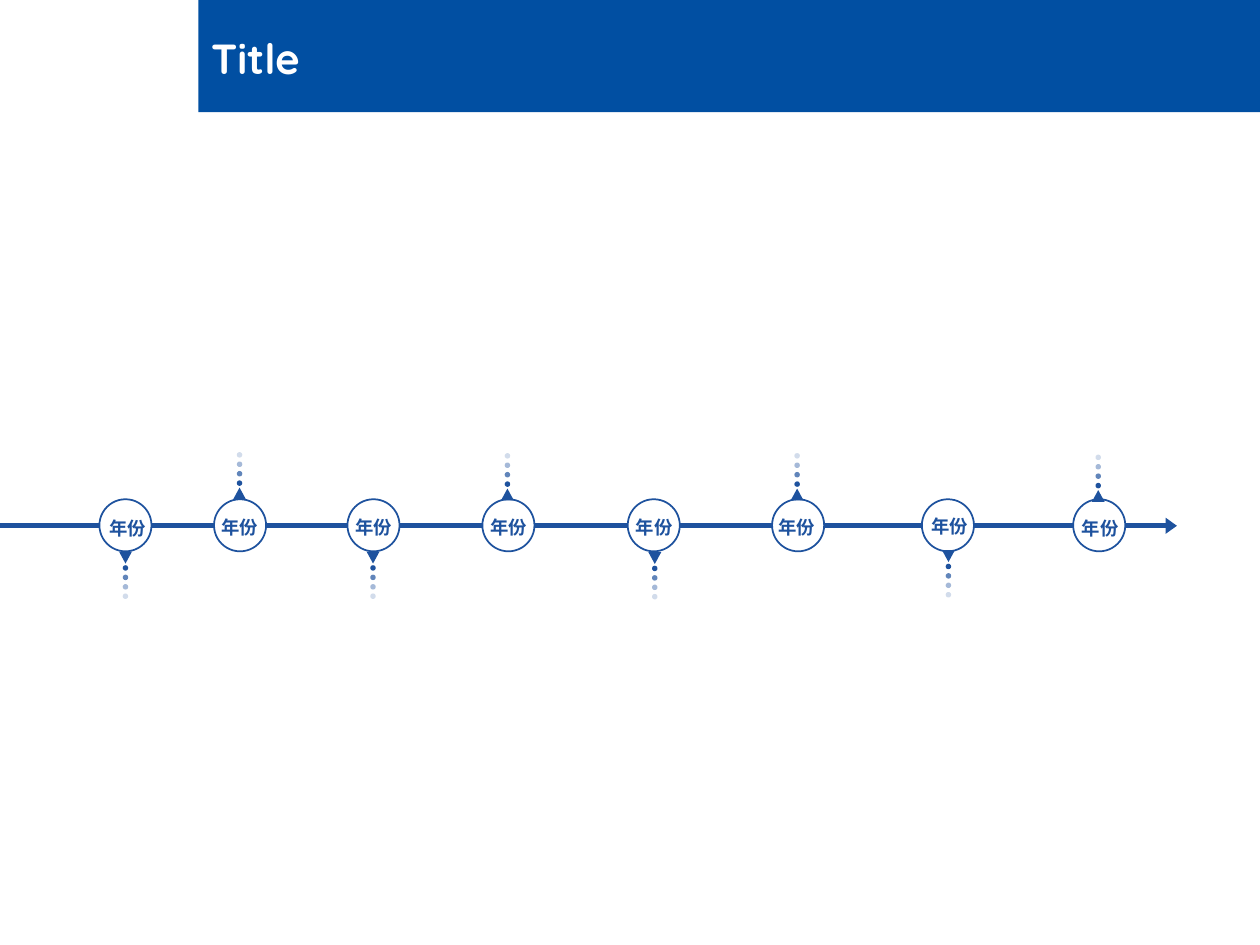
"""Build a timeline slide with eight year markers on an arrow."""
from lxml.etree import SubElement
from pptx import Presentation
from pptx.dml.color import RGBColor
from pptx.enum.shapes import MSO_CONNECTOR, MSO_SHAPE as Shp
from pptx.enum.text import MSO_ANCHOR, MSO_AUTO_SIZE as Fit, PP_ALIGN
from pptx.oxml.ns import qn
from pptx.util import Cm, Pt

BAND, BLUE, WHITE = "014FA2", "1E529E", "FFFFFF"
AXIS_Y, CIRCLE, DOT = 10.59, 1.05, 0.11
ALPHAS = (100, 70, 40, 20)
STATIONS = (
    (2.53, 1.96, 10.31, 2.53, 11.36, 1),
    (4.84, 4.22, 10.29, 4.83, 9.83, -1),
    (7.53, 6.91, 10.29, 7.52, 11.36, 1),
    (10.25, 9.64, 10.29, 10.23, 9.85, -1),
    (13.18, 12.57, 10.29, 13.2, 11.37, 1),
    (16.09, 15.44, 10.29, 16.07, 9.85, -1),
    (19.11, 18.53, 10.26, 19.12, 11.33, 1),
    (22.16, 21.56, 10.31, 22.14, 9.88, -1),
)


def rgb(color):
    return RGBColor.from_string(color)


class Deck:
    def __init__(self):
        self.prs = Presentation()
        self.prs.slide_width, self.prs.slide_height = Cm(25.4), Cm(19.05)
        self.s = self.prs.slides.add_slide(self.prs.slide_layouts[5])

    def run(self, p, text, font, size, color):
        r = p.add_run()
        r.text = text
        r.font.name, r.font.size, r.font.bold = font, Pt(size), True
        r.font.color.rgb = rgb(color)

    def shape(self, parent, kind, cx, cy, w, h, fill=BLUE, line=None, alpha=100, rot=0):
        sp = parent.shapes.add_shape(kind, Cm(cx - w / 2), Cm(cy - h / 2), Cm(w), Cm(h))
        sp.shadow.inherit = False
        sp.rotation = rot
        sp.fill.solid()
        sp.fill.fore_color.rgb = rgb(fill)
        if alpha < 100:
            clr = sp.element.spPr.find(qn("a:solidFill"))[0]
            SubElement(clr, qn("a:alpha"), val=str(alpha * 1000))
        if line:
            sp.line.color.rgb = rgb(line)
            sp.line.width = Pt(1)
        else:
            sp.line.fill.background()
        return sp

    def title(self, text):
        band = self.shape(self.s, Shp.RECTANGLE, 14.7, 1.13, 21.4, 2.26, BAND)
        sp = self.s.shapes.title
        sp.left, sp.top, sp.width, sp.height = Cm(4), Cm(0.61), Cm(21.4), Cm(1.09)
        band.element.addnext(sp.element)
        tf = sp.text_frame
        tf.auto_size, tf.vertical_anchor = Fit.NONE, MSO_ANCHOR.MIDDLE
        p = tf.paragraphs[0]
        p.alignment = PP_ALIGN.LEFT
        self.run(p, text, "Quicksand", 24, WHITE)

    def axis(self, end):
        ln = self.s.shapes.add_connector(
            MSO_CONNECTOR.STRAIGHT, Cm(0), Cm(AXIS_Y), Cm(end), Cm(AXIS_Y))
        ln.line.color.rgb = rgb(BLUE)
        ln.line.width = Pt(3)
        SubElement(ln.element.spPr, qn("a:effectLst"))

    def label(self, parent, text, x, y):
        tb = parent.shapes.add_textbox(Cm(x), Cm(y), Cm(1.27), Cm(0.71))
        tf = tb.text_frame
        tf.word_wrap, tf.auto_size = False, Fit.SHAPE_TO_FIT_TEXT
        self.run(tf.paragraphs[0], text, "Calibri", 10.5, BLUE)

    def pointer(self, parent, x, tip, way):
        for i, alpha in enumerate(ALPHAS):
            y = tip + way * (0.09 + 0.19 * i)
            self.shape(parent, Shp.OVAL, x, y, DOT, DOT, alpha=alpha)
        self.shape(parent, Shp.ISOSCELES_TRIANGLE, x, tip - way * 0.12, 0.26, 0.24,
                   rot=180 if way > 0 else 0)

    def station(self, text, cx, text_x, text_y, x, tip, way):
        grp = self.s.shapes.add_group_shape()
        self.shape(grp, Shp.OVAL, cx, AXIS_Y, CIRCLE, CIRCLE, WHITE, BLUE)
        self.label(grp, text, text_x, text_y)
        self.pointer(grp, x, tip, way)


def main():
    deck = Deck()
    deck.title("Title")
    deck.axis(23.52)
    for station in STATIONS:
        deck.station("年份", *station)
    deck.shape(deck.s, Shp.ISOSCELES_TRIANGLE, 23.61, 10.6, 0.33, 0.23, rot=90)
    deck.prs.save("out.pptx")


if __name__ == "__main__":
    main()
